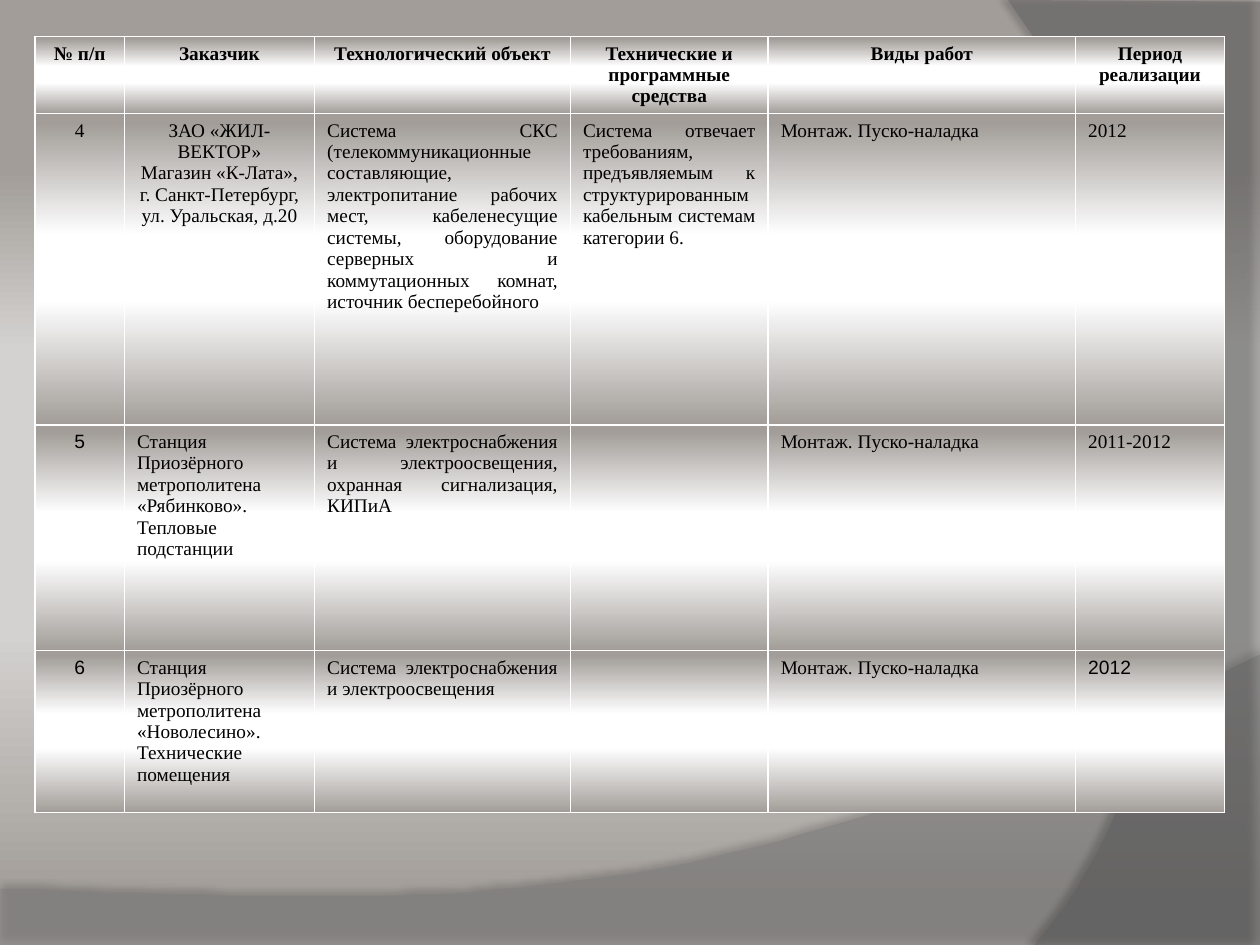
"""Build a slide with a table of completed projects on a grey gradient background."""
from lxml import etree
from pptx import Presentation, util as u
from pptx.dml.color import RGBColor
from pptx.enum import text
from pptx.oxml import ns

Pt = u.Pt
ALIGN = text.PP_ALIGN


def add(parent, tag, **values):
    child = etree.SubElement(parent, ns.qn("a:" + tag))
    for key, value in values.items():
        child.set(key, str(value))
    return child


def paint_gradient(fill, owner, stops):
    fill.gradient()
    fill.gradient_angle = 270
    stop_list = owner.find(".//" + ns.qn("a:gsLst"))
    for stop in list(stop_list):
        stop_list.remove(stop)
    for percent, color in stops:
        add(add(stop_list, "gs", pos=percent * 1000), "srgbClr", val=color)


deck = Presentation()
deck.slide_width, deck.slide_height = Pt(720), Pt(540)
page = deck.slides.add_slide(deck.slide_layouts[6])
paint_gradient(page.background.fill, page.element, [
    (18, "A29D99"), (37, "D4D2D0"), (53, "D4D2D0"), (67, "D4D2D0"), (95, "A29D99")])

waves = [
    {"corners": [(0, 507.6), (0, 540), (720, 540)],
     "curve": [(720, 374.4), (402.5, 524.9), (281.5, 517.7), (0, 507.6)],
     "color": "7F7F7F", "opacity": 45, "shade": 35, "distance": 3.5, "angle": 270},
    {"corners": [(720, 1.4), (720, 540)],
     "curve": [(591.1, 540), (673.2, 445.7), (733, 216), (576, 0)],
     "color": "5E5E5E", "opacity": 40, "shade": 45, "distance": 4, "angle": 180},
]
STEPS = 40
for wave in waves:
    points = list(wave["corners"])
    for step in range(STEPS + 1):
        t = step / STEPS
        weights = [(1 - t) ** 3, 3 * t * (1 - t) ** 2, 3 * t ** 2 * (1 - t), t ** 3]
        points.append(tuple(sum(w * p[axis] for w, p in zip(weights, wave["curve"]))
                            for axis in (0, 1)))
    builder = page.shapes.build_freeform(*points[0], scale=Pt(1))
    builder.add_line_segments(points[1:], close=True)
    shape = builder.convert_to_shape()
    shape.shadow.inherit = False
    shape.line.fill.background()
    shape.fill.solid()
    shape.fill.fore_color.rgb = RGBColor.from_string(wave["color"])
    properties = shape.element.spPr
    add(properties.find(".//" + ns.qn("a:srgbClr")), "alpha", val=wave["opacity"] * 1000)
    shadow = add(properties.find(ns.qn("a:effectLst")), "outerShdw", blurRad=Pt(4),
                 dist=Pt(wave["distance"]), dir=wave["angle"] * 60000,
                 algn="ctr", rotWithShape=0)
    add(add(shadow, "srgbClr", val="000000"), "alpha", val=wave["shade"] * 1000)

rows = [
    ["№ п/п", "Заказчик", "Технологический объект", "Технические и программные средства",
     "Виды работ", "Период реализации"],
    ["4", "ЗАО «ЖИЛ-ВЕКТОР»\nМагазин «К-Лата», г. Санкт-Петербург, ул. Уральская, д.20",
     "Система СКС (телекоммуникационные составляющие, электропитание рабочих мест, "
     "кабеленесущие системы, оборудование серверных и коммутационных комнат, "
     "источник бесперебойного",
     "Система отвечает требованиям, предъявляемым к структурированным кабельным "
     "системам категории 6.",
     "Монтаж. Пуско-наладка", "2012"],
    ["5", "Станция Приозёрного метрополитена «Рябинково». Тепловые подстанции",
     "Система электроснабжения и электроосвещения, охранная сигнализация, КИПиА",
     "", "Монтаж. Пуско-наладка", "2011-2012"],
    ["6", "Станция Приозёрного метрополитена «Новолесино». Технические помещения",
     "Система электроснабжения и электроосвещения",
     "", "Монтаж. Пуско-наладка", "2012"],
]
widths = [51.1, 108.7, 146.2, 113, 175.7, 85]
heights = [43.5, 178, 129, 92.5]
arial_cells = {(2, 0), (3, 0), (3, 5)}
cell_stops = [(3, "A29D99"), (39, "FFFFFF"), (60, "FFFFFF"), (100, "A29D99")]

table = page.shapes.add_table(len(rows), len(widths), Pt(20), Pt(20.9),
                              Pt(sum(widths)), Pt(sum(heights))).table
table.first_row = table.horz_banding = False
for column, width in zip(table.columns, widths):
    column.width = Pt(width)
for row, height in zip(table.rows, heights):
    row.height = Pt(height)

for r, row in enumerate(rows):
    for c, words in enumerate(row):
        cell = table.cell(r, c)
        properties = cell._tc.get_or_add_tcPr()
        for side in ("lnL", "lnR", "lnT", "lnB"):
            border = add(properties, side, w=Pt(1))
            add(add(border, "solidFill"), "srgbClr", val="FFFFFF")
        paint_gradient(cell.fill, properties, cell_stops)
        if not words:
            continue
        cell.text = words
        centred = r == 0 or c == 0 or (r, c) == (1, 1)
        font = {"name": "Arial" if (r, c) in arial_cells else "Times New Roman",
                "size": Pt(11), "bold": r == 0}
        for para in cell.text_frame.paragraphs:
            para.alignment = ALIGN.CENTER if centred else ALIGN.JUSTIFY
            for span in para.runs:
                for key, value in font.items():
                    setattr(span.font, key, value)
                span.font.color.rgb = RGBColor.from_string("000000")

deck.save("out.pptx")
